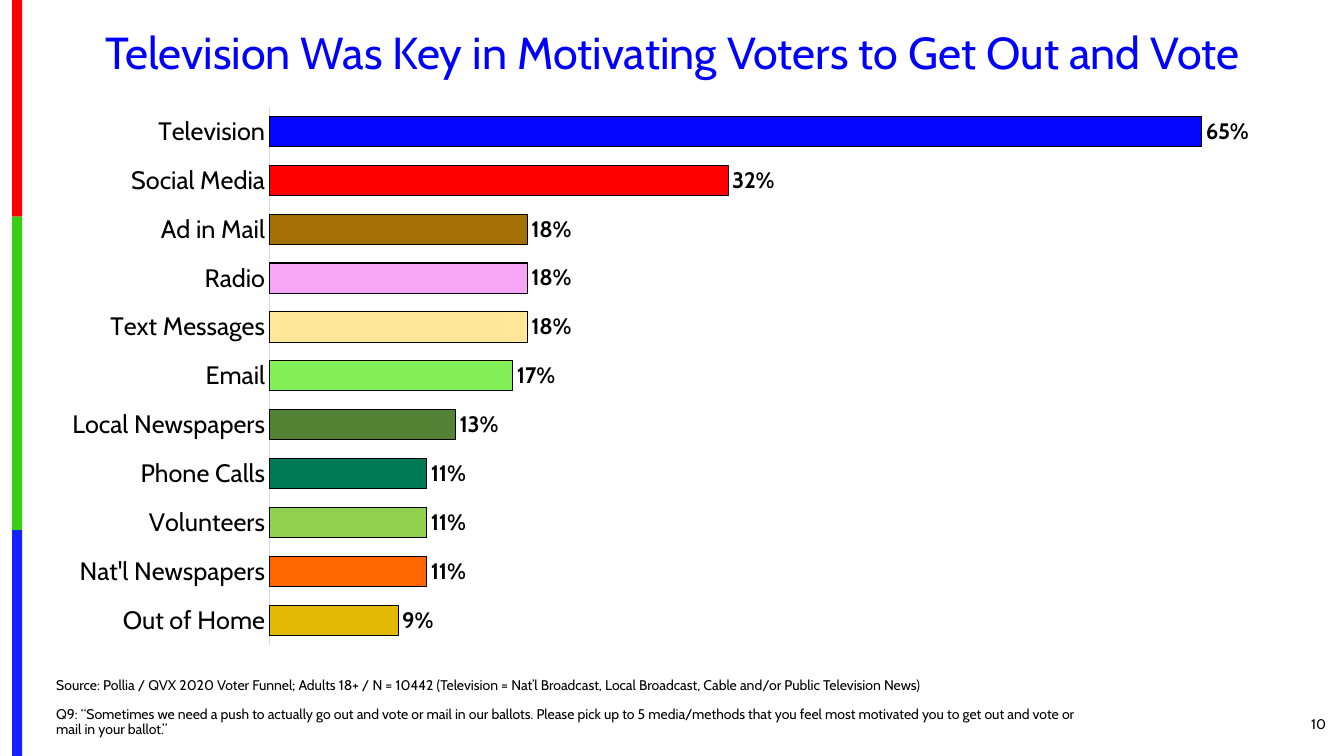
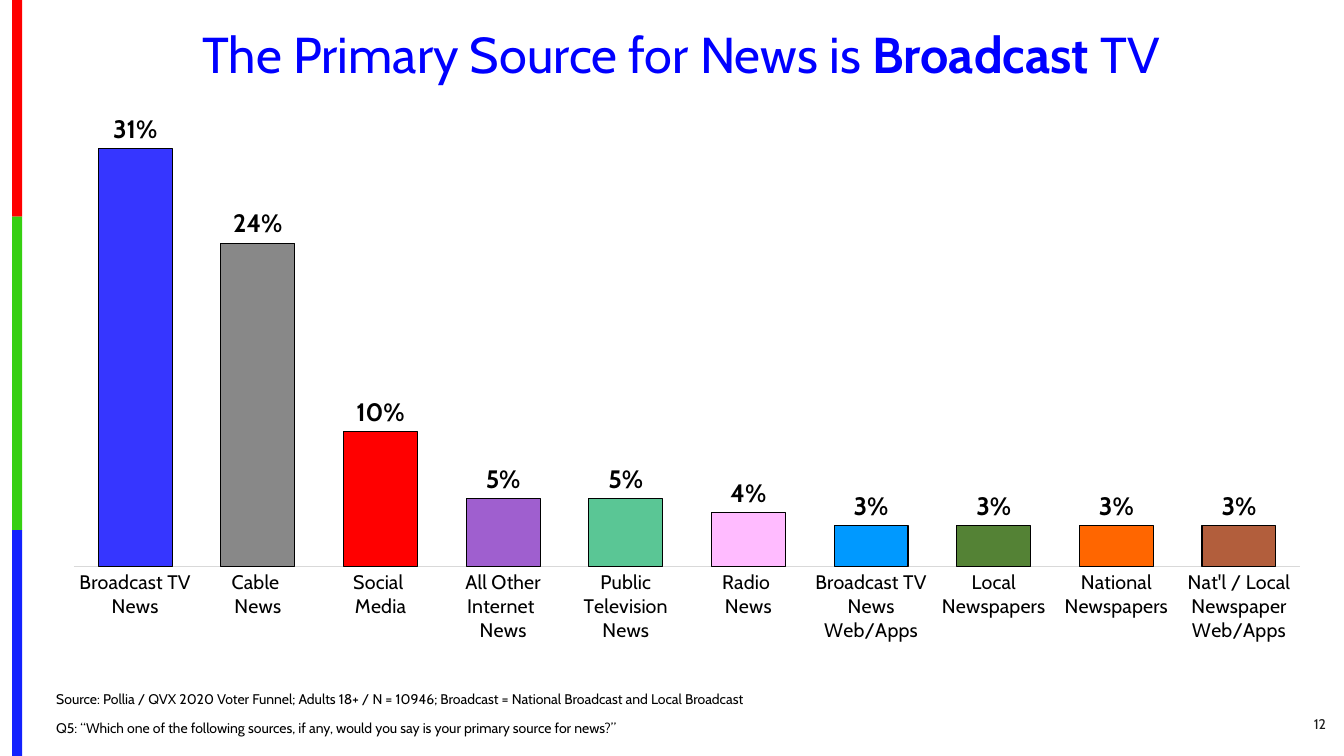
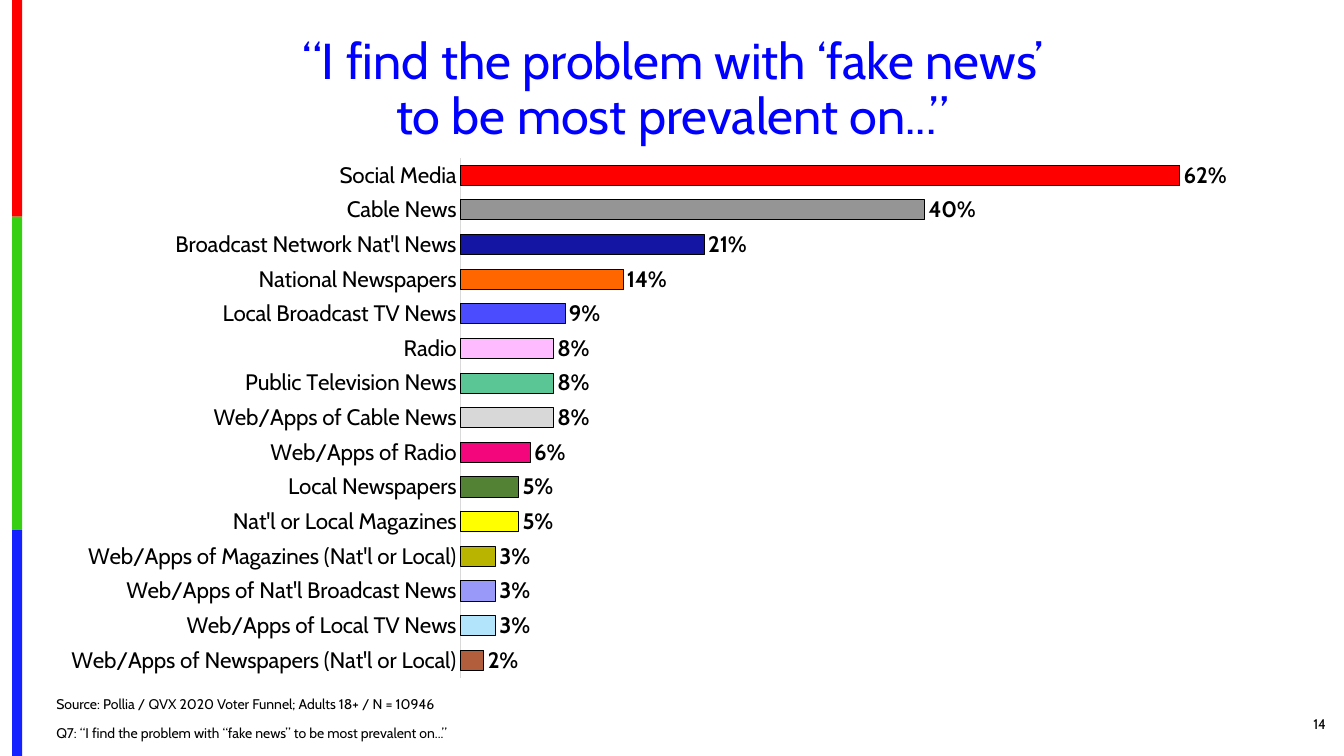
"""Build three slides of voter survey charts with a shared side stripe, title and footer."""
import pptx
import pptx.chart.data
import pptx.dml.color
import pptx.enum.chart
import pptx.enum.shapes
import pptx.enum.text
import pptx.util

Inches = pptx.util.Inches
Pt = pptx.util.Pt
RGBColor = pptx.dml.color.RGBColor
ALIGN = pptx.enum.text.PP_ALIGN
ANCHOR = pptx.enum.text.MSO_ANCHOR
CHART = pptx.enum.chart.XL_CHART_TYPE

FONT = "Cabin"
COLORS = {
    "title": "0000FF",
    "text": "000000",
    "soft_text": "1C1C1C",
    "axis": "D9D9D9",
    "stripe_red": "FE0000",
    "stripe_green": "36CF12",
    "stripe_blue": "1322FE",
    "television": "0505FF",
    "broadcast": "3636FF",
    "network": "1515A3",
    "local_broadcast": "4C4CFF",
    "network_web": "9999F9",
    "local_web": "B2E5FC",
    "broadcast_web": "0099FF",
    "social": "FF0000",
    "cable_dark": "888888",
    "cable": "959595",
    "cable_web": "D8D8D8",
    "internet": "9F5FCF",
    "public": "5AC695",
    "radio": "FFBBFF",
    "radio_soft": "F7A5F7",
    "radio_web": "F3057C",
    "local_papers": "548235",
    "national_papers": "FF6600",
    "papers_web": "B25E3C",
    "magazines": "FFFF00",
    "magazines_web": "B8B400",
    "mail": "A46F05",
    "messages": "FFE699",
    "email": "84F058",
    "phone": "007A54",
    "volunteers": "92D050",
    "outdoor": "E3B905",
}
STRIPES = [("stripe_red", 2.15), ("stripe_green", 3.11), ("stripe_blue", 2.24)]

SLIDES = [
    {
        "title": [[("Television Was Key in Motivating Voters to Get Out and Vote", False)]],
        "title_box": (0.46, 0.26, 12.42, 0.59),
        "title_size": 32,
        "number": "10",
        "number_color": "text",
        "footer": [
            "Source: Pollia / QVX 2020 Voter Funnel; Adults 18+ / N = 10442 (Television = Nat’l Broadcast, "
            "Local Broadcast, Cable and/or Public Television News)",
            "Q9: “Sometimes we need a push to actually go out and vote or mail in our ballots. Please pick up to "
            "5 media/methods that you feel most motivated you to get out and vote or mail in your ballot.”",
        ],
        "footer_box": (0.46, 6.67, 10.54, 0.7),
        "chart_type": CHART.BAR_CLUSTERED,
        "chart_box": (0.47, 0.95, 12.41, 5.56),
        "axis_max": 0.7,
        "gap": 62,
        "category_size": 18,
        "label_size": 16,
        "bars": [
            ("Television", 0.65, "television"),
            ("Social Media", 0.32, "social"),
            ("Ad in Mail", 0.18, "mail"),
            ("Radio", 0.18, "radio_soft"),
            ("Text Messages", 0.18, "messages"),
            ("Email", 0.17, "email"),
            ("Local Newspapers", 0.13, "local_papers"),
            ("Phone Calls", 0.11, "phone"),
            ("Volunteers", 0.11, "volunteers"),
            ("Nat'l Newspapers", 0.11, "national_papers"),
            ("Out of Home", 0.09, "outdoor"),
        ],
    },
    {
        "title": [[("The Primary Source for News is ", False), ("Broadcast ", True), ("TV", False)]],
        "title_box": (0.42, 0.25, 12.67, 0.71),
        "title_size": 36,
        "number": "12",
        "number_color": "soft_text",
        "footer": [
            "Source: Pollia / QVX 2020 Voter Funnel; Adults 18+ / N = 10946; "
            "Broadcast = National Broadcast and Local Broadcast",
            "Q5: “Which one of the following sources, if any, would you say is your primary source for news?”",
        ],
        "footer_box": (0.46, 6.82, 10.63, 0.54),
        "chart_type": CHART.COLUMN_CLUSTERED,
        "chart_box": (0.48, 0.83, 12.67, 5.66),
        "axis_max": 0.35,
        "gap": 66,
        "category_size": 14,
        "label_size": 18,
        "bars": [
            ("Broadcast TV News", 0.31, "broadcast"),
            ("Cable \nNews", 0.24, "cable_dark"),
            ("Social \nMedia", 0.10, "social"),
            ("All Other Internet \nNews", 0.05, "internet"),
            ("Public Television News", 0.05, "public"),
            ("Radio \nNews", 0.04, "radio"),
            ("Broadcast TV News Web/Apps", 0.03, "broadcast_web"),
            ("Local Newspapers", 0.03, "local_papers"),
            ("National Newspapers", 0.03, "national_papers"),
            ("Nat'l / Local Newspaper Web/Apps", 0.03, "papers_web"),
        ],
    },
    {
        "title": [[("“I find the problem with ‘fake news’", False)], [("to be most prevalent on...”", False)]],
        "title_box": (0.46, 0.31, 12.42, 1.19),
        "title_size": 36,
        "number": "14",
        "number_color": "text",
        "footer": [
            "Source: Pollia / QVX 2020 Voter Funnel; Adults 18+ / N = 10946",
            "Q7: “I find the problem with “fake news” to be most prevalent on...”",
        ],
        "footer_box": (0.46, 6.87, 9.45, 0.54),
        "chart_type": CHART.BAR_CLUSTERED,
        "chart_box": (0.46, 1.46, 12.41, 5.37),
        "axis_max": 0.7,
        "gap": 72,
        "category_size": 16,
        "label_size": 16,
        "bars": [
            ("Social Media", 0.62, "social"),
            ("Cable News", 0.40, "cable"),
            ("Broadcast Network Nat'l News", 0.21, "network"),
            ("National Newspapers", 0.14, "national_papers"),
            ("Local Broadcast TV News", 0.09, "local_broadcast"),
            ("Radio", 0.08, "radio"),
            ("Public Television News", 0.08, "public"),
            ("Web/Apps of Cable News", 0.08, "cable_web"),
            ("Web/Apps of Radio", 0.06, "radio_web"),
            ("Local Newspapers", 0.05, "local_papers"),
            ("Nat'l or Local Magazines", 0.05, "magazines"),
            ("Web/Apps of Magazines (Nat'l or Local)", 0.03, "magazines_web"),
            ("Web/Apps of Nat'l Broadcast News", 0.03, "network_web"),
            ("Web/Apps of Local TV News", 0.03, "local_web"),
            ("Web/Apps of Newspapers (Nat'l or Local)", 0.02, "papers_web"),
        ],
    },
]


def set_font(font, size, color, bold=False):
    font.name = FONT
    font.size = Pt(size)
    font.bold = bold
    font.color.rgb = RGBColor.from_string(COLORS[color])


def add_text(slide, box, paragraphs, size, color, alignment, anchor, line_spacing):
    frame = slide.shapes.add_textbox(*map(Inches, box)).text_frame
    frame.word_wrap = True
    frame.vertical_anchor = anchor
    for index, lines in enumerate(paragraphs):
        paragraph = frame.add_paragraph() if index else frame.paragraphs[0]
        paragraph.alignment = alignment
        paragraph.line_spacing = line_spacing
        paragraph.space_before = Pt(10 if index else 0)
        for line_index, line in enumerate(lines):
            if line_index:
                paragraph.add_line_break()
            for text, bold in line:
                run = paragraph.add_run()
                run.text = text
                set_font(run.font, size, color, bold)


presentation = pptx.Presentation()
presentation.slide_width = Inches(13.33)
presentation.slide_height = Inches(7.5)

for content in SLIDES:
    slide = presentation.slides.add_slide(presentation.slide_layouts[6])

    top = 0
    for color, height in STRIPES:
        shape = slide.shapes.add_shape(
            pptx.enum.shapes.MSO_SHAPE.RECTANGLE, Inches(0.12), Inches(top), Inches(0.1), Inches(height))
        shape.shadow.inherit = False
        shape.fill.solid()
        shape.fill.fore_color.rgb = RGBColor.from_string(COLORS[color])
        shape.line.fill.background()
        top += height

    bars = content["bars"]
    if content["chart_type"] == CHART.BAR_CLUSTERED:
        bars = bars[::-1]
    chart_data = pptx.chart.data.CategoryChartData(number_format="0%")
    chart_data.categories = [name for name, value, color in bars]
    chart_data.add_series("Series 1", [value for name, value, color in bars])
    chart = slide.shapes.add_chart(
        content["chart_type"], *map(Inches, content["chart_box"]), chart_data).chart
    chart.has_legend = False
    chart.has_title = False
    set_font(chart.font, 10, "text")

    category_axis = chart.category_axis
    category_axis.major_tick_mark = pptx.enum.chart.XL_TICK_MARK.NONE
    category_axis.format.line.color.rgb = RGBColor.from_string(COLORS["axis"])
    category_axis.format.line.width = Pt(0.75)
    set_font(category_axis.tick_labels.font, content["category_size"], "text")

    value_axis = chart.value_axis
    value_axis.minimum_scale = 0
    value_axis.maximum_scale = content["axis_max"]
    value_axis.has_major_gridlines = False
    value_axis.visible = False

    plot = chart.plots[0]
    plot.vary_by_categories = False
    plot.gap_width = content["gap"]
    plot.has_data_labels = True
    labels = plot.data_labels
    labels.show_value = True
    labels.number_format = "0%"
    labels.number_format_is_linked = False
    labels.position = pptx.enum.chart.XL_LABEL_POSITION.OUTSIDE_END
    set_font(labels.font, content["label_size"], "text", True)

    for index, (name, value, color) in enumerate(bars):
        bar_format = plot.series[0].points[index].format
        bar_format.fill.solid()
        bar_format.fill.fore_color.rgb = RGBColor.from_string(COLORS[color])
        bar_format.line.color.rgb = RGBColor.from_string(COLORS["text"])
        bar_format.line.width = Pt(0.75)

    add_text(slide, content["title_box"], [content["title"]], content["title_size"], "title",
             ALIGN.CENTER, ANCHOR.TOP, 0.9)
    add_text(slide, content["footer_box"], [[[(text, False)]] for text in content["footer"]], 10, "text",
             ALIGN.LEFT, ANCHOR.BOTTOM, 0.9)
    add_text(slide, (12.17, 6.98, 1.08, 0.4), [[[(content["number"], False)]]], 10, content["number_color"],
             ALIGN.RIGHT, ANCHOR.MIDDLE, 1.0)

presentation.save("out.pptx")
